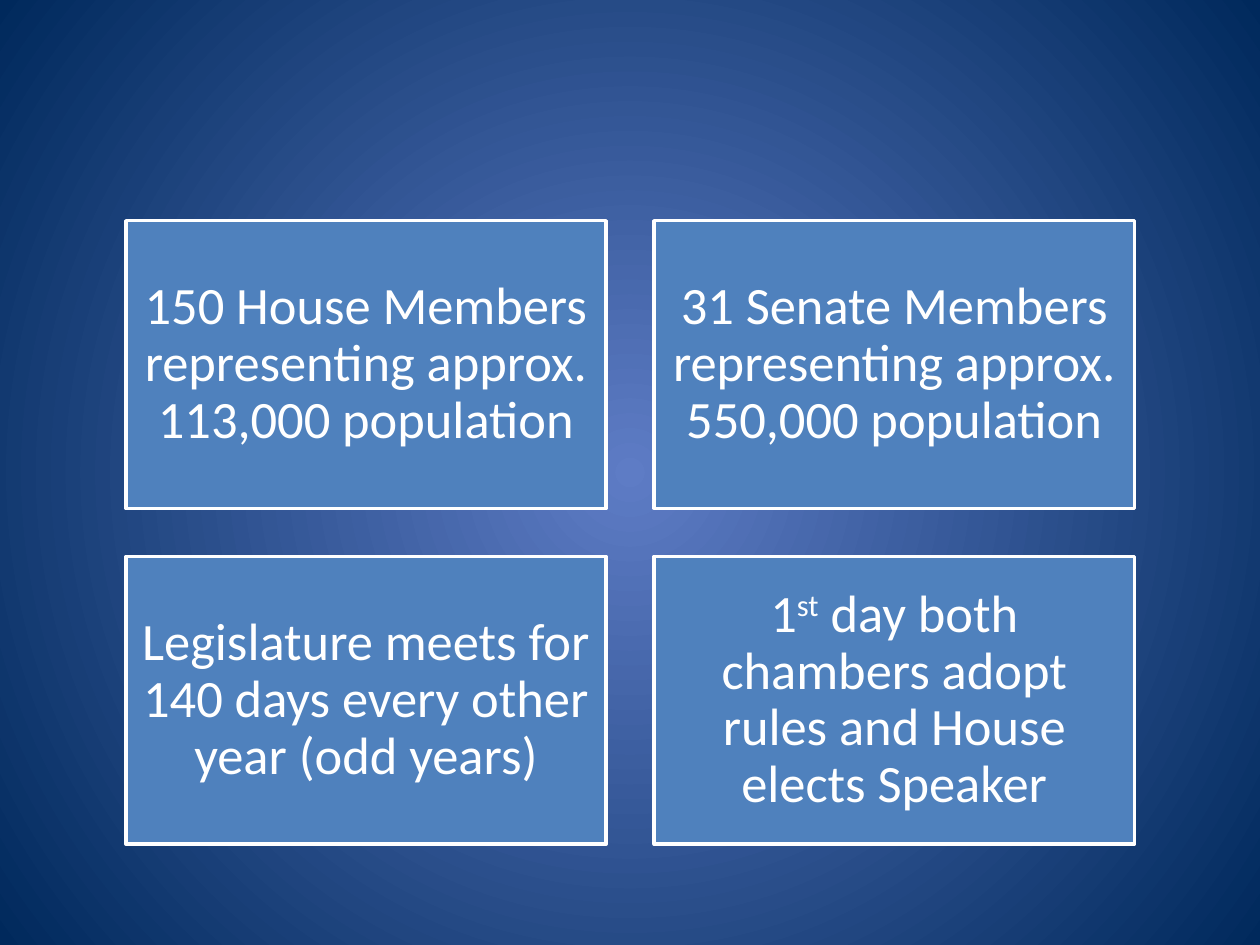
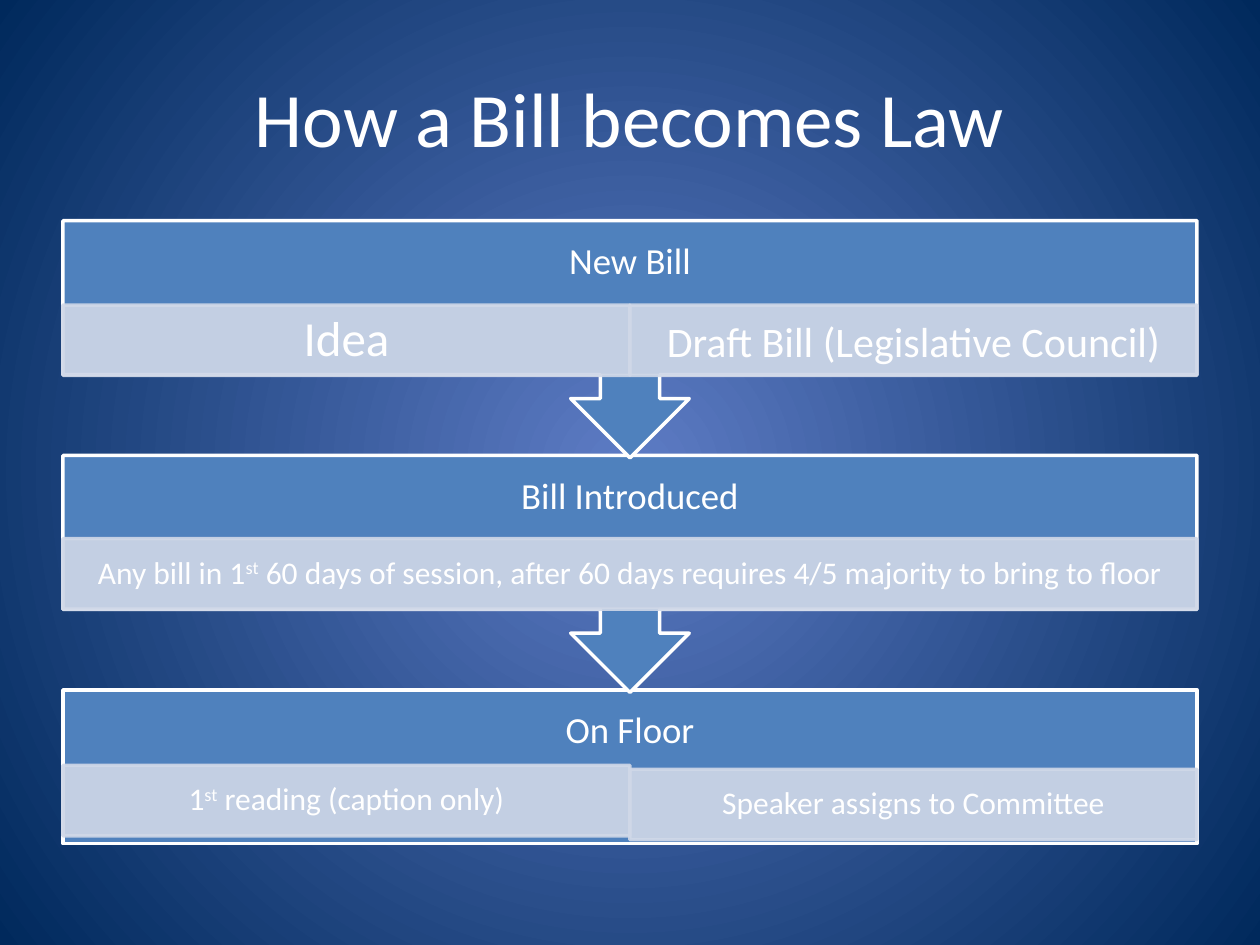
"""Build two slides on the legislature and on how a bill becomes law."""
import pptx
import pptx.util
import pptx.dml.color
import pptx.enum.shapes
import pptx.enum.text
import pptx.oxml.ns
import pptx.oxml.xmlchemy

FACTS = [
    "150 House Members representing approx. 113,000 population",
    "31 Senate Members representing approx. 550,000 population",
    "Legislature meets for 140 days every other year (odd years)",
    "1^st^ day both chambers adopt rules and House elects Speaker",
]
TITLE = "How a Bill becomes Law"
STEPS = [
    {"head": "New Bill", "cells": [
        {"text": "Idea", "size": 28, "drop": 1.7},
        {"text": "Draft Bill (Legislative Council)", "size": 24, "drop": 1.7, "lead": 1.0}]},
    {"head": "Bill Introduced", "cells": [
        {"text": "Any bill in 1^st^ 60 days of session, after 60 days "
                 "requires 4/5 majority to bring to floor", "size": 18, "drop": 1.68}]},
    {"head": "On Floor", "cells": [
        {"text": "1^st^ reading (caption only)", "size": 18, "drop": 1.52},
        {"text": "Speaker assigns to Committee", "size": 18, "drop": 1.6}]},
]

THEME = {
    "font": "Calibri", "text": "FFFFFF", "edge": "FFFFFF", "box": "4F81BD",
    "pale": "D0D8E8", "glow": "5E7CC5", "deep": "00295C",
    "title": 44, "fact": 30, "head": 21, "line": 2, "lead": 0.9, "alpha": 90,
}
TOP = 4.45
FACT = {"left": 2.54, "wide": 9.68, "high": 5.8, "gap": 0.97}
STEP = {"left": 1.27, "wide": 22.86, "high": 3.1, "call": 4.78, "pitch": 4.73, "cell": 1.42}

Cm = pptx.util.Cm
SHAPE = pptx.enum.shapes.MSO_SHAPE
qn = pptx.oxml.ns.qn
make = pptx.oxml.xmlchemy.OxmlElement


def rgb(key):
    return pptx.dml.color.RGBColor.from_string(THEME[key])


def put(item, vals):
    for name, val in vals.items():
        setattr(item, name, val)


def write(shape, text, size, pads, lead=THEME["lead"]):
    frame = shape.text_frame
    sides = ("margin_left", "margin_top", "margin_right", "margin_bottom")
    put(frame, {"word_wrap": True, "vertical_anchor": pptx.enum.text.MSO_ANCHOR.MIDDLE})
    put(frame, dict(zip(sides, map(Cm, pads))))
    para = frame.paragraphs[0]
    put(para, {"alignment": pptx.enum.text.PP_ALIGN.CENTER, "line_spacing": lead})
    for spot, part in enumerate(text.split("^")):
        if not part:
            continue
        run = para.add_run()
        run.text = part
        put(run.font, {"name": THEME["font"], "size": pptx.util.Pt(size)})
        run.font.color.rgb = rgb("text")
        if spot % 2:
            run._r.get_or_add_rPr().set("baseline", "30000")


def block(slide, kind, area, fill, edge):
    shape = slide.shapes.add_shape(kind, *map(Cm, area))
    shape.shadow.inherit = False
    shape.fill.solid()
    shape.fill.fore_color.rgb = rgb(fill)
    shape.line.color.rgb = rgb(edge)
    shape.line.width = pptx.util.Pt(THEME["line"])
    return shape


def fade(shape):
    for color in shape._element.spPr.iter(qn("a:srgbClr")):
        alpha = make("a:alpha")
        alpha.set("val", str(THEME["alpha"] * 1000))
        color.append(alpha)


def shade(master):
    fill = master.background.fill
    fill.gradient()
    for stop, key, place in zip(fill.gradient_stops, ("glow", "deep"), (0, 1)):
        stop.color.rgb = rgb(key)
        stop.position = place
    grad = next(master._element.iter(qn("a:gradFill")))
    ring = make("a:path")
    ring.set("path", "circle")
    focus = make("a:fillToRect")
    for side in "ltrb":
        focus.set(side, "50000")
    ring.append(focus)
    grad.replace(grad.find(qn("a:lin")), ring)


def draw_facts(slide):
    wide, high, gap = FACT["wide"], FACT["high"], FACT["gap"]
    for spot, text in enumerate(FACTS):
        row, col = divmod(spot, 2)
        area = (FACT["left"] + col * (wide + gap), TOP + row * (high + gap), wide, high)
        box = block(slide, SHAPE.RECTANGLE, area, "box", "edge")
        write(box, text, THEME["fact"], [THEME["fact"] * 0.01] * 4)


def draw_step(slide, spot, step):
    left, wide, cell = STEP["left"], STEP["wide"], STEP["cell"]
    top = TOP + spot * STEP["pitch"]
    last = spot == len(STEPS) - 1
    kind = SHAPE.RECTANGLE if last else SHAPE.DOWN_ARROW_CALLOUT
    high = STEP["high"] if last else STEP["call"]
    box = block(slide, kind, (left, top, wide, high), "box", "edge")
    pad = THEME["head"] * 0.02
    write(box, step["head"], THEME["head"], (pad, pad, pad, pad + cell))
    part = wide / len(step["cells"])
    for col, item in enumerate(step["cells"]):
        area = (left + col * part, top + item["drop"], part, cell)
        tile = block(slide, SHAPE.RECTANGLE, area, "pale", "pale")
        fade(tile)
        size = item["size"]
        write(tile, item["text"], size, (size * 0.02, size * 0.004) * 2,
              item.get("lead", THEME["lead"]))


def draw_steps(slide):
    title = slide.shapes.add_textbox(*map(Cm, (STEP["left"], 0.76, STEP["wide"], 3.18)))
    write(title, TITLE, THEME["title"], (0.25, 0.13) * 2, 1.0)
    for spot, step in reversed(list(enumerate(STEPS))):
        draw_step(slide, spot, step)


def main():
    deck = pptx.Presentation()
    put(deck, {"slide_width": Cm(25.4), "slide_height": Cm(19.05)})
    shade(deck.slide_master)
    for draw in (draw_facts, draw_steps):
        draw(deck.slides.add_slide(deck.slide_layouts[6]))
    deck.save("out.pptx")


if __name__ == "__main__":
    main()
